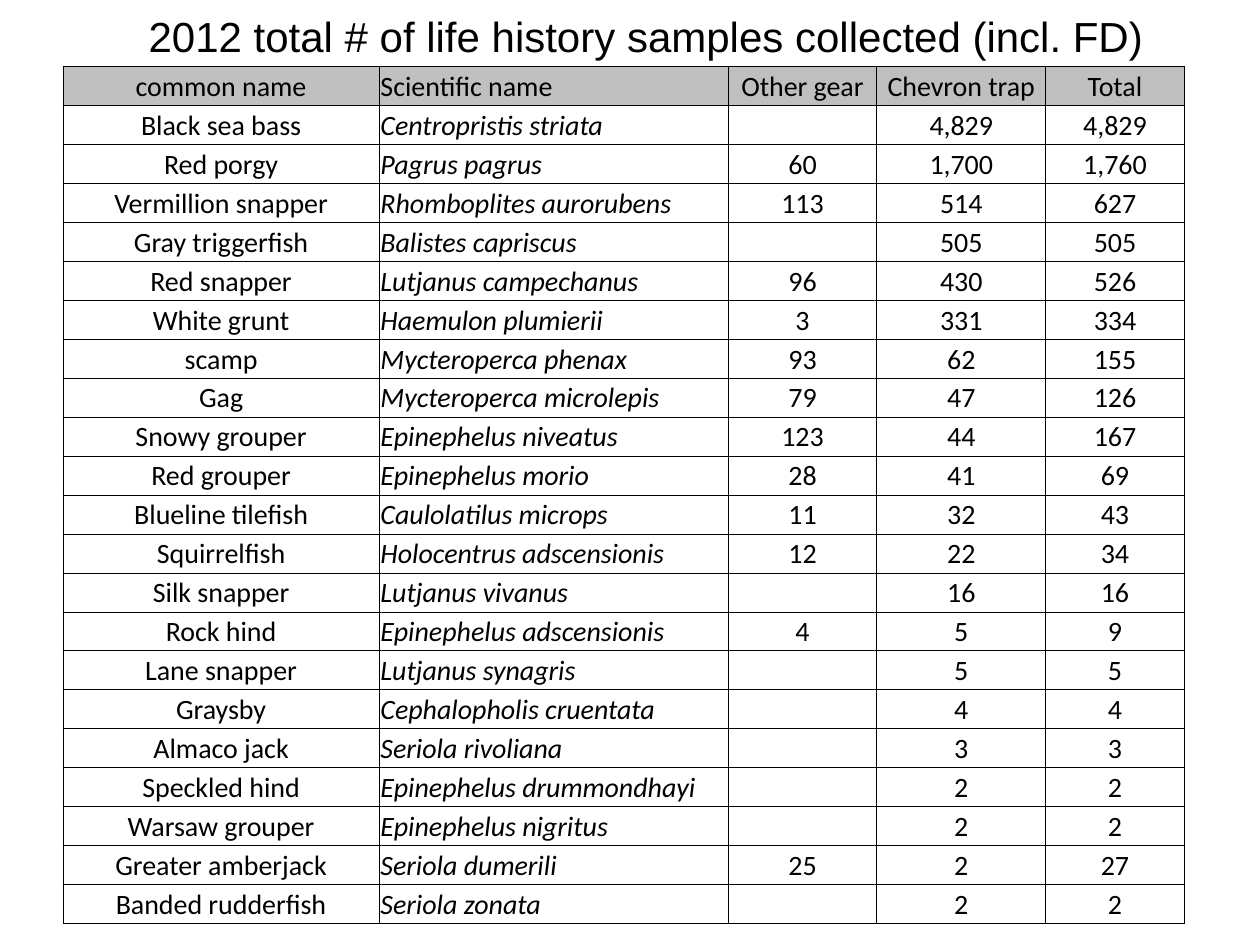
from lxml import etree
from pptx import Presentation
from pptx.dml.color import RGBColor
from pptx.enum import text
from pptx.oxml.ns import qn
from pptx.util import Inches, Pt

COLORS = {"ink": "000000", "name head": "C0C0C0", "count head": "BFBFBF"}
TITLE = "2012 total # of life history samples collected (incl. FD)"
HEADINGS = ("common name", "Scientific name", "Other gear", "Chevron trap", "Total")
SAMPLES = [
    ("Black sea bass", "Centropristis striata", "", "4,829", "4,829"),
    ("Red porgy", "Pagrus pagrus", "60", "1,700", "1,760"),
    ("Vermillion snapper", "Rhomboplites aurorubens", "113", "514", "627"),
    ("Gray triggerfish", "Balistes capriscus", "", "505", "505"),
    ("Red snapper", "Lutjanus campechanus", "96", "430", "526"),
    ("White grunt", "Haemulon plumierii", "3", "331", "334"),
    ("scamp", "Mycteroperca phenax", "93", "62", "155"),
    ("Gag", "Mycteroperca microlepis", "79", "47", "126"),
    ("Snowy grouper", "Epinephelus niveatus", "123", "44", "167"),
    ("Red grouper", "Epinephelus morio", "28", "41", "69"),
    ("Blueline tilefish", "Caulolatilus microps", "11", "32", "43"),
    ("Squirrelfish", "Holocentrus adscensionis", "12", "22", "34"),
    ("Silk snapper", "Lutjanus vivanus", "", "16", "16"),
    ("Rock hind", "Epinephelus adscensionis", "4", "5", "9"),
    ("Lane snapper", "Lutjanus synagris", "", "5", "5"),
    ("Graysby", "Cephalopholis cruentata", "", "4", "4"),
    ("Almaco jack", "Seriola rivoliana", "", "3", "3"),
    ("Speckled hind", "Epinephelus drummondhayi", "", "2", "2"),
    ("Warsaw grouper", "Epinephelus nigritus", "", "2", "2"),
    ("Greater amberjack", "Seriola dumerili", "25", "2", "27"),
    ("Banded rudderfish", "Seriola zonata", "", "2", "2"),
]
COLUMN_WIDTHS = (2.51, 2.77, 1.18, 1.34, 1.1)
TABLE_HEIGHT = 6.8
SCIENTIFIC = 1
BODY_SIZE = 16


def write(para, words, *, size, font, italic=False, align=text.PP_ALIGN.LEFT):
    para.alignment = align
    if not words:
        # An empty paragraph takes its line height from its end mark.
        etree.SubElement(para._p, qn("a:endParaRPr"), sz=str(size * 100))
        return
    span = para.add_run()
    span.text = words
    span.font.size = Pt(size)
    span.font.name = font
    span.font.italic = italic
    span.font.color.rgb = RGBColor.from_string(COLORS["ink"])


def add_borders(cell):
    """Rule all four sides; call before filling, as the schema puts lines first."""
    properties = cell._tc.get_or_add_tcPr()
    for side in ("lnL", "lnR", "lnT", "lnB"):
        line = etree.SubElement(properties, qn(f"a:{side}"), w=str(Pt(0.5)))
        fill = etree.SubElement(line, qn("a:solidFill"))
        etree.SubElement(fill, qn("a:srgbClr"), val=COLORS["ink"])


def set_fill(cell, row, column):
    if row:
        cell.fill.background()
        return
    shade = "name head" if column <= SCIENTIFIC else "count head"
    cell.fill.solid()
    cell.fill.fore_color.rgb = RGBColor.from_string(COLORS[shade])


def add_title(slide):
    title = slide.shapes.title
    title.left, title.top = Inches(1.08), Inches(0)
    title.width, title.height = Inches(8.17), Inches(0.5)
    frame = title.text_frame
    frame.word_wrap = False
    frame.auto_size = text.MSO_AUTO_SIZE.NONE
    frame.vertical_anchor = text.MSO_ANCHOR.MIDDLE
    frame.margin_top, frame.margin_bottom = Inches(0.09), Inches(0.02)
    write(frame.paragraphs[0], TITLE, size=24, font="Arial")


def add_sample_table(slide):
    rows = [HEADINGS, *SAMPLES]
    table = slide.shapes.add_table(
        len(rows), len(HEADINGS), Inches(0.5), Inches(0.53),
        Inches(sum(COLUMN_WIDTHS)), Inches(TABLE_HEIGHT)).table
    table.first_row = table.horz_banding = False
    for column, width in zip(table.columns, COLUMN_WIDTHS):
        column.width = Inches(width)
    for r, values in enumerate(rows):
        table.rows[r].height = Inches(TABLE_HEIGHT / len(rows))
        for c, words in enumerate(values):
            cell = table.cell(r, c)
            cell.margin_left = cell.margin_right = cell.margin_top = Inches(0.01)
            cell.margin_bottom = 0
            cell.vertical_anchor = text.MSO_ANCHOR.MIDDLE
            add_borders(cell)
            set_fill(cell, r, c)
            align = text.PP_ALIGN.LEFT if c == SCIENTIFIC else text.PP_ALIGN.CENTER
            write(cell.text_frame.paragraphs[0], words, size=BODY_SIZE, font="Calibri",
                  italic=r > 0 and c == SCIENTIFIC, align=align)


def main():
    deck = Presentation()
    deck.slide_width, deck.slide_height = Inches(10), Inches(7.5)
    slide = deck.slides.add_slide(deck.slide_layouts.get_by_name("Title Only"))
    add_sample_table(slide)
    add_title(slide)
    deck.save("out.pptx")


if __name__ == "__main__":
    main()
